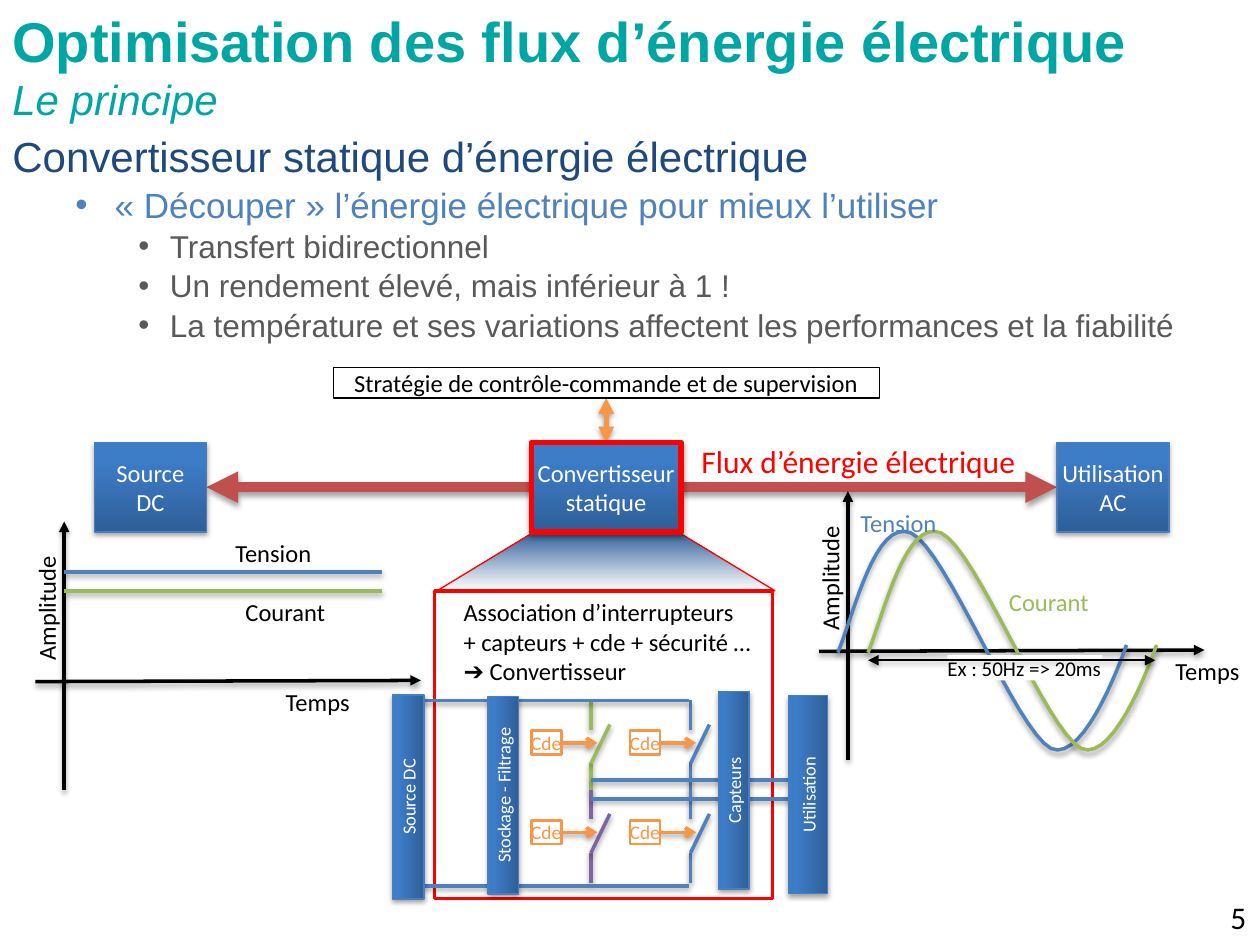
from lxml import etree
from pptx import Presentation
from pptx.dml.color import RGBColor
from pptx.enum.shapes import MSO_CONNECTOR, MSO_SHAPE
from pptx.enum.text import MSO_ANCHOR, PP_ALIGN
from pptx.oxml.ns import qn
from pptx.util import Pt

RECTANGLE, TRAPEZOID = MSO_SHAPE.RECTANGLE, MSO_SHAPE.TRAPEZOID
STRAIGHT = MSO_CONNECTOR.STRAIGHT
LEFT, CENTER, RIGHT = PP_ALIGN.LEFT, PP_ALIGN.CENTER, PP_ALIGN.RIGHT
TOP, MIDDLE = MSO_ANCHOR.TOP, MSO_ANCHOR.MIDDLE

BLACK = RGBColor(0x00, 0x00, 0x00)
WHITE = RGBColor(0xFF, 0xFF, 0xFF)
RED = RGBColor(0xFF, 0x00, 0x00)
BRICK = RGBColor(0xC0, 0x50, 0x4D)
ORANGE = RGBColor(0xF7, 0x96, 0x46)
GREEN = RGBColor(0x9B, 0xBB, 0x59)
PURPLE = RGBColor(0x80, 0x64, 0xA2)
BLUE = RGBColor(0x4F, 0x81, 0xBD)
DARK_BLUE = RGBColor(0x2F, 0x5F, 0x99)
LIGHT_BLUE = RGBColor(0x3D, 0x7C, 0xC7)
BORDER_BLUE = RGBColor(0x4B, 0x7E, 0xBC)
NAVY = RGBColor(0x1F, 0x49, 0x7D)
TEAL = RGBColor(0x00, 0xA6, 0xA4)
GREY = RGBColor(0x59, 0x59, 0x59)

presentation = Presentation()
presentation.slide_width, presentation.slide_height = Pt(720), Pt(540)
slide = presentation.slides.add_slide(presentation.slide_layouts[6])
shapes = slide.shapes
shadowed = []


def write(shape, text, size=14, color=BLACK, font="Calibri", bold=False, italic=False,
          align=LEFT, anchor=TOP, margins=(7.2, 3.6), wrap=False,
          level=0, bullet_indent=None, space_before=0):
    frame = shape.text_frame
    frame.word_wrap, frame.vertical_anchor = wrap, anchor
    frame.margin_left = frame.margin_right = Pt(margins[0])
    frame.margin_top = frame.margin_bottom = Pt(margins[1])
    for line in text.split("\n"):
        paragraph = frame.add_paragraph() if frame.text else frame.paragraphs[0]
        paragraph.text = line
        paragraph.alignment, paragraph.level = align, level
        if space_before:
            paragraph.space_before = Pt(space_before)
        if bullet_indent:
            properties = paragraph._p.get_or_add_pPr()
            properties.set("marL", str(Pt(bullet_indent[0])))
            properties.set("indent", str(Pt(bullet_indent[1])))
            etree.SubElement(properties, qn("a:buFont"), typeface="Arial")
            etree.SubElement(properties, qn("a:buChar"), char="•")
        run_font = paragraph.runs[0].font
        run_font.name, run_font.size, run_font.color.rgb = font, Pt(size), color
        run_font.bold, run_font.italic = bold, italic


def add_line(x1, y1, x2, y2, color, width=2, head=None, tail=None):
    connector = shapes.add_connector(STRAIGHT, Pt(x1), Pt(y1), Pt(x2), Pt(y2))
    connector.line.color.rgb, connector.line.width = color, Pt(width)
    for tag, arrow in (("a:headEnd", head), ("a:tailEnd", tail)):
        if arrow:
            etree.SubElement(connector.line._get_or_add_ln(), qn(tag), type=arrow)
    etree.SubElement(connector._element.spPr, qn("a:effectLst"))
    shadowed.append(connector)
    return connector


title = shapes.add_textbox(Pt(0), Pt(0), Pt(720), Pt(56.9))
write(title, "Optimisation des flux d’énergie électrique", size=32, color=TEAL,
      font="Arial", bold=True, wrap=True)
write(title, "Le principe", size=24, color=TEAL, font="Arial", italic=True, wrap=True)

body = shapes.add_textbox(Pt(0), Pt(71.3), Pt(720), Pt(85))
write(body, "Convertisseur statique d’énergie électrique", size=24, color=NAVY,
      font="Arial", wrap=True)
write(body, "«\u00a0Découper\u00a0» l’énergie électrique pour mieux l’utiliser", size=20,
      color=BLUE, font="Arial", wrap=True, level=1, bullet_indent=(58.5, -22.5),
      space_before=1)
write(body, "Transfert bidirectionnel\n"
      "Un rendement élevé, mais inférieur à 1 !\n"
      "La température et ses variations affectent les performances et la fiabilité",
      size=18, color=GREY, font="Arial", wrap=True, level=2, bullet_indent=(90, -18),
      space_before=1)

zoom = shapes.add_shape(TRAPEZOID, Pt(249.8), Pt(303.8), Pt(193), Pt(33.8))
zoom.adjustments[0] = 1.65
zoom.fill.gradient()
zoom.fill.gradient_angle = 90
for stop, color in zip(zoom.fill.gradient_stops, (WHITE, DARK_BLUE)):
    stop.color.rgb = color
zoom.line.color.rgb, zoom.line.width = RED, Pt(0.75)
zoom.shadow.inherit = False
shadowed.append(zoom)

energy_arrow = add_line(118, 278.4, 604, 278.4, BRICK, 6, "triangle", "triangle")
control_arrow = add_line(346.4, 252.8, 346.4, 227.5, ORANGE, 3, "triangle", "triangle")

strategy = shapes.add_shape(RECTANGLE, Pt(190.4), Pt(210.2), Pt(312), Pt(17.3))
strategy.fill.background()
strategy.line.color.rgb, strategy.line.width = BLACK, Pt(0.75)
strategy.shadow.inherit = False
write(strategy, "Stratégie de contrôle-commande et de supervision", align=CENTER,
      anchor=MIDDLE, margins=(0, 0), wrap=True)

for dx, dy in ((0, 0), (447.8, -17.3)):
    add_line(36.7 + dx, 451.4 + dy, 36.7 + dx, 298 + dy, BLACK, tail="triangle")
    add_line(20.2 + dx, 389.5 + dy, 240.5 + dx, 388.8 + dy, BLACK, tail="triangle")
for y, color in ((326.9, BLUE), (337.7, GREEN)):
    add_line(36.7, y, 218.2, y, color)

curve_start = (478.8, 373)
curve_segments = (
    ((488.2, 349.9), (500.4, 295.9), (520.6, 304.6)),
    ((540.7, 313.9), (580.3, 416.9), (600.5, 427.7)),
    ((620.6, 437), (643.7, 368.6), (643.7, 368.6)),
)
steps = 16
for dx, color in ((0, BLUE), (17.2, GREEN)):
    builder = shapes.build_freeform(Pt(curve_start[0] + dx), Pt(curve_start[1]))
    start = curve_start
    points = []
    for first, second, end in curve_segments:
        for step in range(1, steps + 1):
            t = step / steps
            x, y = ((1 - t) ** 3 * a + 3 * t * (1 - t) ** 2 * b
                    + 3 * t ** 2 * (1 - t) * c + t ** 3 * d
                    for a, b, c, d in zip(start, first, second, end))
            points.append((Pt(x + dx), Pt(y)))
        start = end
    builder.add_line_segments(points, close=False)
    curve = builder.convert_to_shape()
    curve.fill.background()
    curve.line.color.rgb, curve.line.width = color, Pt(2)
    curve.shadow.inherit = False
    shadowed.append(curve)

panel = shapes.add_shape(RECTANGLE, Pt(248.4), Pt(337.7), Pt(193), Pt(175.7))
panel.fill.solid()
panel.fill.fore_color.rgb = WHITE
panel.line.color.rgb, panel.line.width = RED, Pt(2)
panel.shadow.inherit = False

for x, top, color in ((337.7, 400.3, GREEN), (394.6, 400.3, BLUE),
                      (337.7, 451.4, PURPLE), (394.6, 451.4, BLUE)):
    add_line(x, top, x, top + 16.8, color)
    add_line(x, top + 36, x, top + 53, color)
    add_line(x + 10.8, top + 13.7, x, top + 36, color)
for x1, x2, y in ((229.7, 393.8, 400.3), (235.4, 393.8, 506.2),
                  (337.7, 450.7, 445.7), (337.7, 456.5, 456.5)):
    add_line(x1, y, x2, y, BLUE)

for x in (303.6, 360):
    for y in (417.6, 468.7):
        add_line(x + 9.4, y + 6.9, x + 37.8, y + 6.9, ORANGE, tail="arrow")
        command = shapes.add_shape(RECTANGLE, Pt(x), Pt(y), Pt(17.3), Pt(13.7))
        command.fill.solid()
        command.fill.fore_color.rgb = WHITE
        command.line.color.rgb, command.line.width = ORANGE, Pt(1.5)
        command.shadow.inherit = False
        write(command, "Cde", size=11, color=ORANGE, margins=(0, 0))

blue_boxes = {}
for text, x, y, width, height, rotation, size, margins, border, border_width in (
    ("Source\nDC", 54, 252.8, 64, 51.2, 0, 14, (2.9, 8.6), BORDER_BLUE, 0.75),
    ("Convertisseur\nstatique", 303.6, 252.8, 85.6, 51.2, 0, 14, (2.9, 8.6), RED, 3),
    ("Utilisation\nAC", 604, 252.8, 64, 51.2, 0, 14, (2.9, 8.6), BORDER_BLUE, 0.75),
    ("Source DC", 175, 446.4, 116.6, 18, 270, 10.5, (0, 0), BORDER_BLUE, 0.75),
    ("Stockage - Filtrage", 231.1, 445.7, 113, 17.3, 270, 10.5, (0, 0), BORDER_BLUE, 0.75),
    ("Capteurs", 362.9, 442.8, 113, 17.3, 270, 10.5, (0, 0), BORDER_BLUE, 0.75),
    ("Utilisation", 405.4, 442.8, 113, 22.3, 270, 10.5, (0, 0), BORDER_BLUE, 0.75),
):
    box = shapes.add_shape(RECTANGLE, Pt(x), Pt(y), Pt(width), Pt(height))
    box.rotation = rotation
    box.fill.gradient()
    box.fill.gradient_angle = 90
    for stop, color, position in zip(box.fill.gradient_stops,
                                     (DARK_BLUE, LIGHT_BLUE), (0, 0.8)):
        stop.color.rgb, stop.position = color, position
    box.line.color.rgb, box.line.width = border, Pt(border_width)
    box.shadow.inherit = False
    write(box, text, size=size, color=WHITE, align=CENTER, anchor=MIDDLE, margins=margins)
    shadowed.append(box)
    blue_boxes[text] = box

energy_arrow.begin_connect(blue_boxes["Source\nDC"], 3)
energy_arrow.end_connect(blue_boxes["Utilisation\nAC"], 1)
control_arrow.begin_connect(blue_boxes["Convertisseur\nstatique"], 0)
control_arrow.end_connect(strategy, 2)

for text, x, y, width, height, rotation, size, color, align in (
    ("Flux d’énergie électrique", 393.8, 249.1, 197.3, 28.8, 0, 18, RED, LEFT),
    ("Association d’interrupteurs\n+ capteurs + cde + sécurité …\n➔ Convertisseur",
     257.8, 337.7, 182.9, 58.3, 0, 14, BLACK, LEFT),
    ("Tension", 127.4, 303.8, 59.8, 24.5, 0, 14, BLACK, LEFT),
    ("Courant", 133.2, 337.7, 60.5, 24.5, 0, 14, BLACK, LEFT),
    ("Temps", 156.2, 388.8, 52.6, 24.5, 0, 14, BLACK, LEFT),
    ("Amplitude", -10.8, 334.8, 74.9, 24.5, 270, 14, BLACK, LEFT),
    ("Tension", 484.6, 286.6, 59.8, 24.5, 0, 14, BLUE, LEFT),
    ("Courant", 569.5, 331.9, 60.5, 24.5, 0, 14, GREEN, LEFT),
    ("Temps", 664.6, 371.5, 52.6, 24.5, 0, 14, BLACK, LEFT),
    ("Amplitude", 437, 317.5, 74.9, 24.5, 270, 14, BLACK, LEFT),
    ("5", 668.2, 509.8, 51.1, 28.8, 0, 18, BLACK, RIGHT),
):
    label = shapes.add_textbox(Pt(x), Pt(y), Pt(width), Pt(height))
    label.rotation = rotation
    write(label, text, size=size, color=color, align=align, wrap=align == RIGHT)

period = shapes.add_textbox(Pt(541.4), Pt(374.4), Pt(88.6), Pt(14.4))
period.fill.solid()
period.fill.fore_color.rgb = WHITE
write(period, "Ex : 50Hz => 20ms", size=12, margins=(0, 0))
add_line(496.1, 377.3, 660.2, 377.3, BLACK, 1, "triangle", "triangle")

for shape in shadowed:
    effects = shape._element.spPr.find(qn("a:effectLst"))
    shadow = etree.SubElement(effects, qn("a:outerShdw"), blurRad=str(Pt(3.1)),
                              dist=str(Pt(1.7)), dir="5400000", rotWithShape="0")
    shadow_color = etree.SubElement(shadow, qn("a:srgbClr"), val="000000")
    etree.SubElement(shadow_color, qn("a:alpha"), val="36000")

presentation.save("out.pptx")
